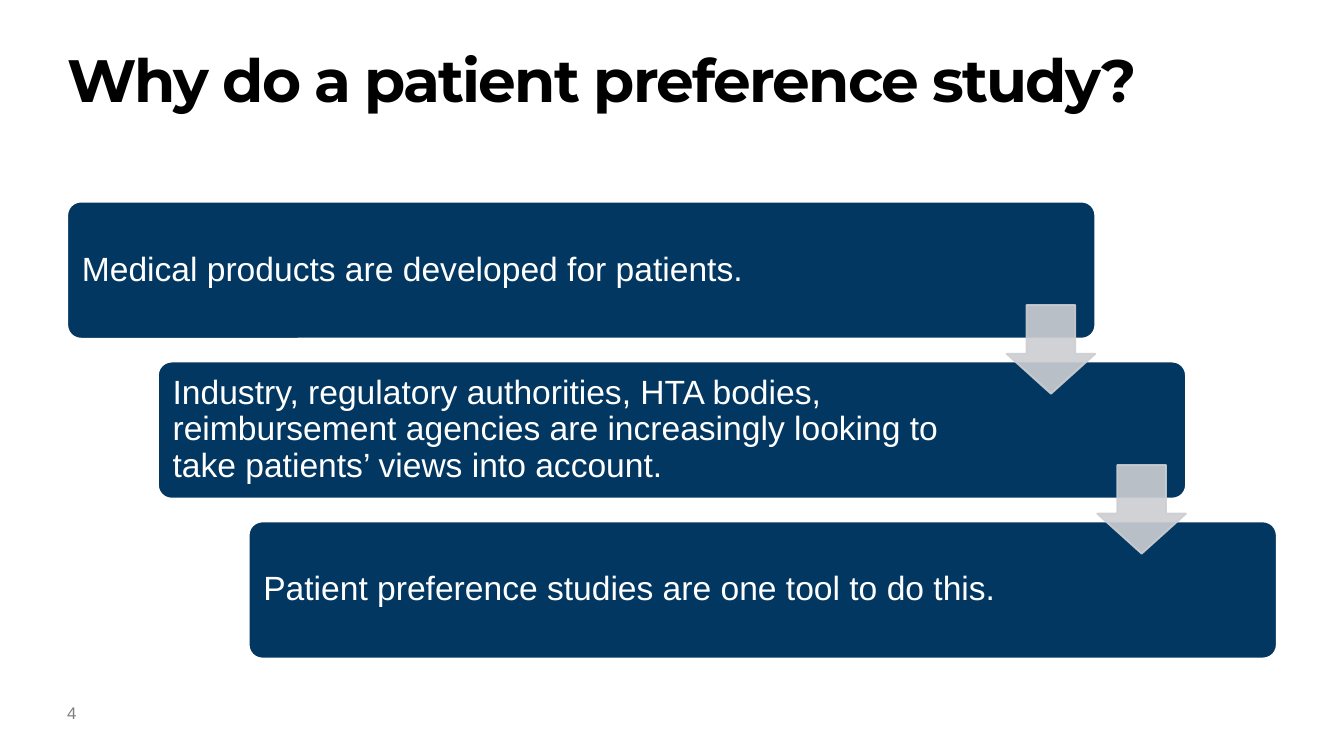
import dataclasses

import pptx
import pptx.dml.color
import pptx.enum.shapes
import pptx.enum.text
import pptx.oxml
import pptx.oxml.ns
import pptx.util

Inches = pptx.util.Inches
Pt = pptx.util.Pt
MSO_SHAPE = pptx.enum.shapes.MSO_SHAPE
ANCHOR = pptx.enum.text.MSO_ANCHOR
ALIGN = pptx.enum.text.PP_ALIGN

NAVY, GREY, WHITE = "023761", "CCCED2", "FFFFFF"

SLIDE_WIDTH = 10
SLIDE_HEIGHT = SLIDE_WIDTH * 9 / 16
MARGIN = 0.5
CONTENT_WIDTH = SLIDE_WIDTH - 2 * MARGIN

STEP_TOP = 1.5
STEP_WIDTH, STEP_HEIGHT = 7.65, 1.02
SHIFT_X, SHIFT_Y = (CONTENT_WIDTH - STEP_WIDTH) / 2, 1.19
ARROW_SIZE = 0.66
ARROW_DX, ARROW_DY = STEP_WIDTH - ARROW_SIZE, 0.77


@dataclasses.dataclass
class Step:
    text: str
    left: float
    top: float


def paint(color_format, color: str, alpha: int = 100) -> None:
    """Set a solid colour, with opacity in percent."""
    color_format.rgb = pptx.dml.color.RGBColor.from_string(color)
    if alpha < 100:
        node = color_format._xFill.find(pptx.oxml.ns.qn("a:srgbClr"))
        node.append(pptx.oxml.parse_xml(
            f'<a:alpha {pptx.oxml.ns.nsdecls("a")} val="{alpha * 1000}"/>'))


def set_insets(frame, left: float, top: float, right: float, bottom: float) -> None:
    frame.margin_left, frame.margin_top = Inches(left), Inches(top)
    frame.margin_right, frame.margin_bottom = Inches(right), Inches(bottom)


def write(frame, text: str, size: float, font: str, color: str,
          bold: bool = False, spacing: float = 1.0):
    frame.word_wrap = True
    paragraph = frame.paragraphs[0]
    paragraph.text = text
    paragraph.alignment = ALIGN.LEFT
    paragraph.line_spacing = spacing
    paragraph.font.size = Pt(size)
    paragraph.font.name = font
    paragraph.font.bold = bold
    paint(paragraph.font.color, color)
    return paragraph


def add_block(slide, kind, left: float, top: float, width: float, height: float,
              fill: str, line: str, adjustments: list[float], alpha: int = 100):
    block = slide.shapes.add_shape(
        kind, Inches(left), Inches(top), Inches(width), Inches(height))
    block.shadow.inherit = False
    for index, value in enumerate(adjustments):
        block.adjustments[index] = value
    block.fill.solid()
    paint(block.fill.fore_color, fill, alpha)
    block.line.width = Pt(1)
    block.line.fill.solid()
    paint(block.line.color, line, alpha)
    return block


def add_step(slide, step: Step) -> None:
    box = add_block(slide, MSO_SHAPE.ROUNDED_RECTANGLE, step.left, step.top,
                    STEP_WIDTH, STEP_HEIGHT, NAVY, WHITE, [0.1])
    frame = box.text_frame
    # The wide right inset keeps the text clear of the arrows
    set_insets(frame, 0.08, 0.07, 1.41, 0.07)
    frame.vertical_anchor = ANCHOR.MIDDLE
    write(frame, step.text, 18, "Arial", WHITE, spacing=0.9)


def add_arrow(slide, step: Step) -> None:
    """Draw the arrow leading from a step to the next one."""
    add_block(slide, MSO_SHAPE.DOWN_ARROW, step.left + ARROW_DX, step.top + ARROW_DY,
              ARROW_SIZE, ARROW_SIZE, GREY, GREY, [0.55, 0.45], alpha=90)


def main() -> None:
    deck = pptx.Presentation()
    deck.slide_width, deck.slide_height = Inches(SLIDE_WIDTH), Inches(SLIDE_HEIGHT)
    slide = deck.slides.add_slide(deck.slide_layouts[5])

    # Title
    title = slide.shapes.title
    title.left, title.top = Inches(MARGIN), Inches(0.38)
    title.width, title.height = Inches(CONTENT_WIDTH), Inches(1.05)
    set_insets(title.text_frame, 0, 0, 0, 0)
    title.text_frame.vertical_anchor = ANCHOR.TOP
    title.text_frame.auto_size = pptx.enum.text.MSO_AUTO_SIZE.NONE
    heading = write(title.text_frame, "Why do a patient preference study?",
                    32, "Montserrat", "000000", bold=True, spacing=0.9)
    heading.runs[0].font._element.set("spc", "-100")

    # Page number
    page_number = slide.shapes.add_textbox(
        Inches(MARGIN), Inches(5.23), Inches(0.25), Inches(0.25))
    set_insets(page_number.text_frame, 0, 0, 0, 0)
    write(page_number.text_frame, "4", 9, "Arial", "7F7F7F")

    # Staircase of steps, then the arrows on top
    reasons = [
        "Medical products are developed for patients.",
        "Industry, regulatory authorities, HTA bodies, reimbursement agencies "
        "are increasingly looking to take patients’ views into account.",
        "Patient preference studies are one tool to do this.",
    ]
    steps = [Step(text, MARGIN + i * SHIFT_X, STEP_TOP + i * SHIFT_Y)
             for i, text in enumerate(reasons)]
    for step in steps:
        add_step(slide, step)
    for step in steps[:-1]:
        add_arrow(slide, step)

    deck.save("out.pptx")


if __name__ == "__main__":
    main()
